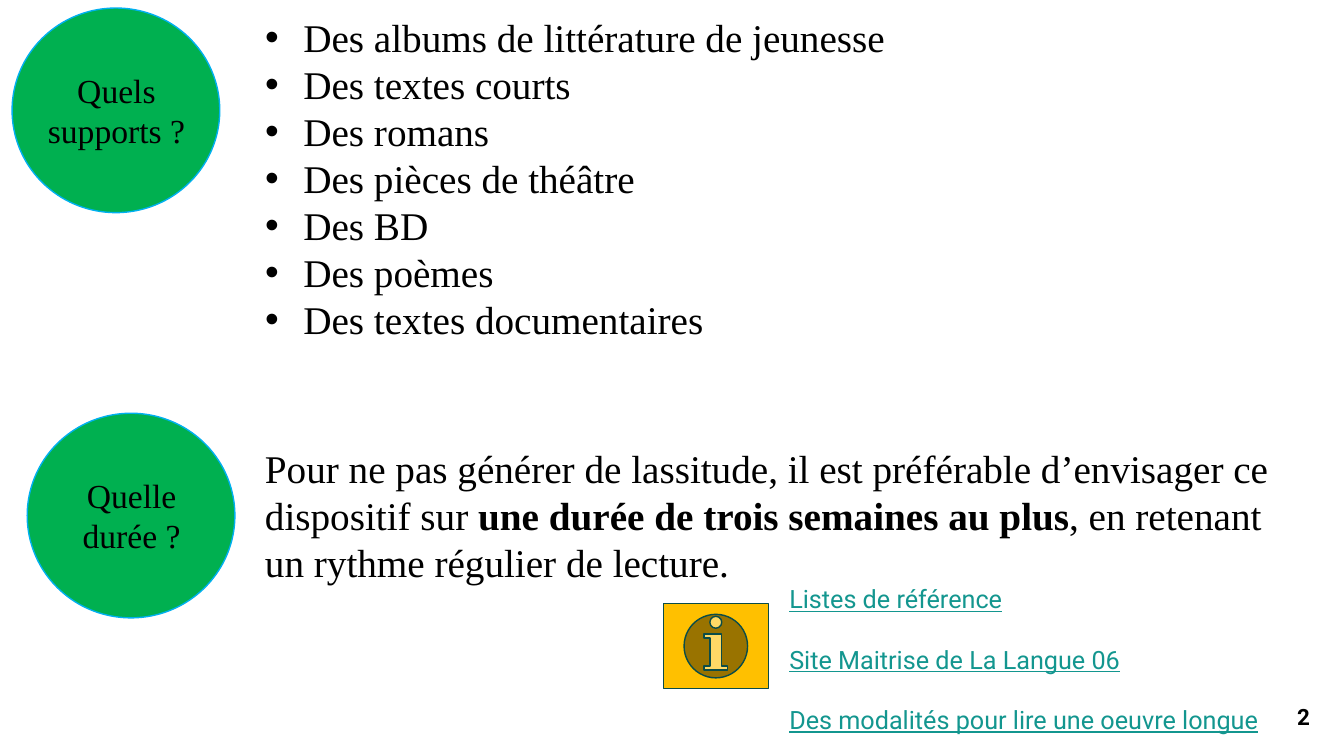
from lxml import etree
from pptx import Presentation
from pptx.dml.color import RGBColor
from pptx.enum import shapes, text
from pptx.oxml.ns import qn
from pptx.util import Inches, Pt

SERIF = "Times New Roman"
SANS = "Roboto"
SUPPORTS = [
    "Des albums de littérature de jeunesse",
    "Des textes courts",
    "Des romans",
    "Des pièces de théâtre",
    "Des BD",
    "Des poèmes",
    "Des textes documentaires",
]
LINKS = [
    "Listes de référence",
    "Site Maitrise de La Langue 06",
    "Des modalités pour lire une oeuvre longue",
]
DURATION = [
    ("Pour ne pas générer de lassitude, il est préférable d’envisager ce dispositif sur ", False),
    ("une durée de trois semaines au plus", True),
    (", en retenant un rythme régulier de lecture.", False),
]


def color(hex_code):
    return RGBColor.from_string(hex_code)


def style_font(font, name, size, hex_code="000000", bold=False, underline=False):
    font.name = name
    font.size = Pt(size)
    font.color.rgb = color(hex_code)
    font.bold = bold
    font.underline = underline


def add_filled_shape(slide, kind, left, top, width, height, fill, line):
    shape = slide.shapes.add_shape(
        kind, Inches(left), Inches(top), Inches(width), Inches(height))
    shape.shadow.inherit = False
    shape.fill.solid()
    shape.fill.fore_color.rgb = color(fill)
    shape.line.color.rgb = color(line)
    shape.line.width = Pt(1)
    return shape


def add_text(slide, left, top, width, height, lines):
    """Add a wrapping text box with one paragraph per line and return its frame."""
    box = slide.shapes.add_textbox(
        Inches(left), Inches(top), Inches(width), Inches(height))
    frame = box.text_frame
    frame.word_wrap = True
    frame.text = "\n".join(lines)
    return frame


def add_bullet(paragraph, indent):
    properties = paragraph._p.get_or_add_pPr()
    properties.set("marL", str(Inches(indent)))
    properties.set("indent", str(-Inches(indent)))
    bullet_font = etree.SubElement(properties, qn("a:buFont"))
    bullet_font.set("typeface", "Arial")
    etree.SubElement(properties, qn("a:buChar")).set("char", "•")


def add_question(slide, left, top, question):
    """Add a green circle with a question centred on it."""
    add_filled_shape(slide, shapes.MSO_SHAPE.OVAL, left, top, 2.06, 2.03,
                     "00B050", "00B0F0")
    frame = add_text(slide, left + 0.15, top + 0.56, 1.77, 0.91, [question])
    paragraph = frame.paragraphs[0]
    paragraph.alignment = text.PP_ALIGN.CENTER
    style_font(paragraph.runs[0].font, SERIF, 24)


def add_supports(slide):
    frame = add_text(slide, 2.53, 0.08, 9.08, 3.4, SUPPORTS)
    for paragraph in frame.paragraphs:
        add_bullet(paragraph, 0.38)
        style_font(paragraph.runs[0].font, SERIF, 28)


def add_duration(slide):
    frame = add_text(slide, 2.53, 4.36, 10.53, 1.51, [])
    for words, bold in DURATION:
        run = frame.paragraphs[0].add_run()
        run.text = words
        style_font(run.font, SERIF, 28, bold=bold)


def add_links(slide):
    add_filled_shape(slide, shapes.MSO_SHAPE.ACTION_BUTTON_INFORMATION,
                     6.58, 5.99, 1.04, 0.84, "FFC000", "0A4C49")
    frame = add_text(slide, 7.73, 5.74, 5.16, 1.62, LINKS)
    for index, paragraph in enumerate(frame.paragraphs):
        paragraph.space_before = Pt(21.5 if index else 0)
        style_font(paragraph.runs[0].font, SANS, 18, "13968F", underline=True)


def add_slide_number(slide, number):
    frame = add_text(slide, 12.42, 6.91, 0.67, 0.4, [number])
    frame.vertical_anchor = text.MSO_ANCHOR.MIDDLE
    paragraph = frame.paragraphs[0]
    paragraph.alignment = text.PP_ALIGN.RIGHT
    style_font(paragraph.runs[0].font, SANS, 16, bold=True)


def main():
    presentation = Presentation()
    presentation.slide_width = Inches(13.33)
    presentation.slide_height = Inches(7.5)
    slide = presentation.slides.add_slide(presentation.slide_layouts[6])
    add_question(slide, 0.12, 0.08, "Quels supports ?")
    add_supports(slide)
    add_question(slide, 0.27, 4.1, "Quelle durée ?")
    add_duration(slide)
    add_links(slide)
    add_slide_number(slide, "2")
    presentation.save("out.pptx")


if __name__ == "__main__":
    main()
